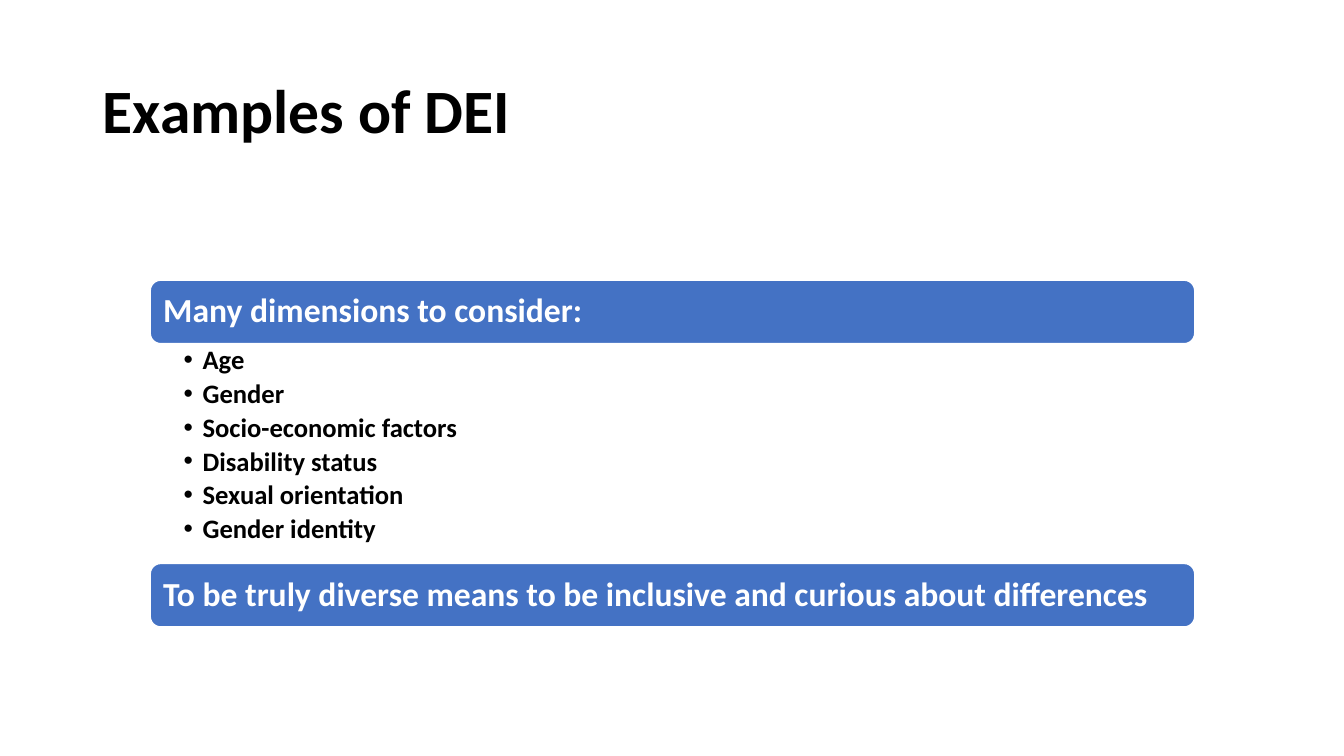
from pptx import Presentation
from pptx.dml.color import RGBColor
from pptx.enum import shapes, text
from pptx.oxml.ns import qn
from pptx.util import Inches, Pt
from lxml import etree

LEFT, WIDTH, BAR = 1.49, 10.36, 0.63
FACTORS = ["Age", "Gender", "Socio-economic factors", "Disability status",
           "Sexual orientation", "Gender identity"]


def color(code):
    return RGBColor.from_string(code)


def place(shape, left, top, width, height):
    shape.left, shape.top = Inches(left), Inches(top)
    shape.width, shape.height = Inches(width), Inches(height)


def pad(frame, left, top, right, bottom):
    frame.margin_left, frame.margin_top = Inches(left), Inches(top)
    frame.margin_right, frame.margin_bottom = Inches(right), Inches(bottom)
    frame.word_wrap = True
    frame.auto_size = text.MSO_AUTO_SIZE.NONE


def style(para, size, code, after=0):
    para.alignment = text.PP_ALIGN.LEFT
    para.line_spacing = 0.9
    para.space_before = Pt(0)
    para.space_after = Pt(after)
    font = para.font
    font.name, font.size, font.bold = "Calibri", Pt(size), True
    font.color.rgb = color(code)


def bullet(para):
    props = para._p.get_or_add_pPr()
    props.set("marL", str(Inches(0.19)))
    props.set("indent", str(Inches(-0.19)))
    face = etree.Element(qn("a:buFont"), typeface="Arial")
    mark = etree.Element(qn("a:buChar"), char="•")
    spot = props.find(qn("a:defRPr"))
    spot.addprevious(face)
    spot.addprevious(mark)


def add_title(slide, words):
    title = slide.shapes.title
    place(title, 0.92, 0.4, 11.5, 1.45)
    frame = title.text_frame
    frame.text = words
    pad(frame, 0.1, 0.05, 0.1, 0.05)
    frame.vertical_anchor = text.MSO_ANCHOR.MIDDLE
    style(frame.paragraphs[0], 44, "000000")


def add_bar(slide, top, words):
    bar = slide.shapes.add_shape(
        shapes.MSO_SHAPE.ROUNDED_RECTANGLE,
        Inches(LEFT), Inches(top), Inches(WIDTH), Inches(BAR))
    bar.shadow.inherit = False
    bar.fill.solid()
    bar.fill.fore_color.rgb = color("4472C4")
    bar.line.color.rgb = color("FFFFFF")
    bar.line.width = Pt(1)
    frame = bar.text_frame
    frame.text = words
    pad(frame, 0.1, 0.1, 0.1, 0.1)
    frame.vertical_anchor = text.MSO_ANCHOR.MIDDLE
    style(frame.paragraphs[0], 24, "FFFFFF")


def add_list(slide, top, items):
    body = slide.placeholders[1]
    place(body, LEFT, top, WIDTH, 2.17)
    frame = body.text_frame
    frame.text = "\n".join(items)
    pad(frame, 0.33, 0.03, 0.19, 0.03)
    frame.vertical_anchor = text.MSO_ANCHOR.TOP
    for para in frame.paragraphs:
        para.level = 1
        style(para, 19, "000000", 3.6)
        bullet(para)


def main():
    deck = Presentation()
    deck.slide_width, deck.slide_height = Inches(13.33), Inches(7.5)
    slide = deck.slides.add_slide(deck.slide_layouts[1])
    add_title(slide, "Examples of DEI")
    add_bar(slide, 2.78, "Many dimensions to consider:")
    add_list(slide, 2.78 + BAR, FACTORS)
    add_bar(slide, 5.59, "To be truly diverse means to be inclusive "
                         "and curious about differences")
    deck.save("out.pptx")


if __name__ == "__main__":
    main()
